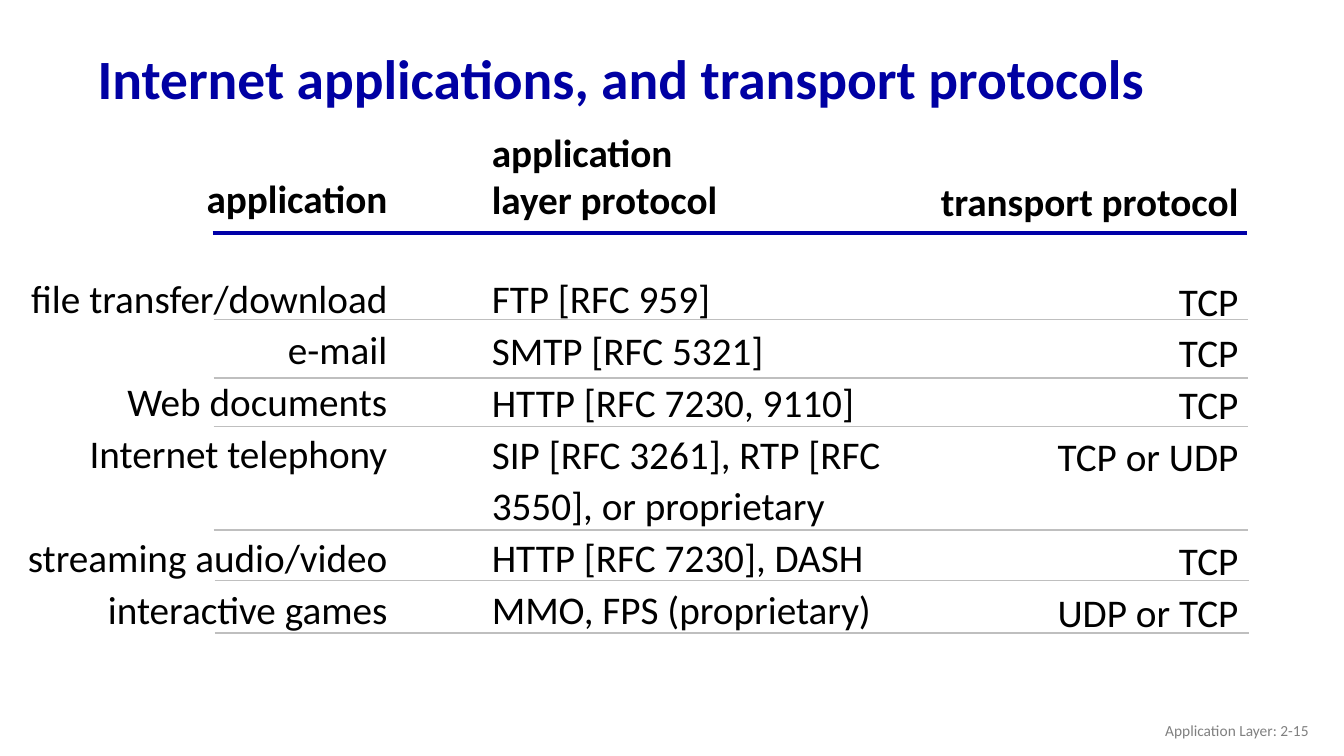
from dataclasses import dataclass

from lxml.etree import SubElement
from pptx import Presentation
from pptx.dml.color import RGBColor
from pptx.enum.shapes import MSO_CONNECTOR as Connector
from pptx.enum.text import MSO_ANCHOR as Anchor, PP_ALIGN as Align
from pptx.oxml.ns import qn
from pptx.slide import Slide
from pptx.util import Emu, Pt

PX = 9144
FONT = "Calibri"
BODY_SIZE = 28
HEADER_GAP = 34.2
ROW_GAP = 37.6


@dataclass(frozen=True)
class Line:
    text: str
    before: float = 0
    spacing: float = 1.1
    bold: bool = False


@dataclass(frozen=True)
class Column:
    left: int
    top: int
    width: int
    height: int
    align: Align
    headers: tuple[str, ...]
    entries: tuple[str, ...]
    gap_at: int = -1

    def lines(self) -> list[Line]:
        """Return the bold headers followed by the spaced entries."""
        gaps = {0: HEADER_GAP, self.gap_at: ROW_GAP}
        return [Line(text, spacing=1, bold=True) for text in self.headers] + [
            Line(text, gaps.get(index, 0)) for index, text in enumerate(self.entries)
        ]


@dataclass(frozen=True)
class Rule:
    left: int
    right: int
    y: int
    color: str = "BFBFBF"
    weight: float = 1.25


COLUMNS = (
    Column(13, 168, 381, 465, Align.RIGHT, ("application",),
           ("file transfer/download", "e-mail", "Web documents",
            "Internet telephony", "streaming audio/video", "interactive games"), 4),
    Column(478, 122, 440, 564, Align.LEFT, ("application", "layer protocol"),
           ("FTP [RFC 959]", "SMTP [RFC 5321]", "HTTP [RFC 7230, 9110]",
            "SIP [RFC 3261], RTP [RFC 3550], or proprietary",
            "HTTP [RFC 7230], DASH", "MMO, FPS (proprietary)")),
    Column(919, 171, 319, 465, Align.RIGHT, ("transport protocol",),
           ("TCP", "TCP", "TCP", "TCP or UDP", "TCP", "UDP or TCP"), 4),
)

RULES = (
    Rule(211, 1237, 231, "0000A8", 2.5),
    *(Rule(212, 1238, y) for y in (317, 375, 423, 526)),
    *(Rule(213, 1239, y) for y in (576, 628)),
)


def px(length: int) -> Emu:
    """Turn a length in px into EMU."""
    return Emu(length * PX)


def rgb(color: str) -> RGBColor:
    """Turn a hex string into a colour."""
    return RGBColor.from_string(color)


def add_text(page: Slide, lines: list[Line], *, left: int, top: int, width: int,
             height: int, size: float = BODY_SIZE, color: str = "000000",
             align: Align = Align.LEFT, anchor: Anchor = Anchor.TOP) -> None:
    """Add a text box with one paragraph for each line."""
    box = page.shapes.add_textbox(px(left), px(top), px(width), px(height))
    frame = box.text_frame
    frame.word_wrap = True
    frame.vertical_anchor = anchor
    for index, line in enumerate(lines):
        para = frame.add_paragraph() if index else frame.paragraphs[0]
        para.alignment = align
        para.line_spacing = line.spacing
        para.space_before = Pt(line.before)
        span = para.add_run()
        span.text = line.text
        span.font.name = FONT
        span.font.size = Pt(size)
        span.font.bold = line.bold
        span.font.color.rgb = rgb(color)


def add_rule(page: Slide, rule: Rule) -> None:
    """Add a horizontal rule without a shadow."""
    connector = page.shapes.add_connector(
        Connector.STRAIGHT, px(rule.left), px(rule.y), px(rule.right), px(rule.y))
    connector.line.color.rgb = rgb(rule.color)
    connector.line.width = Pt(rule.weight)
    SubElement(connector.element.spPr, qn("a:effectLst"))


def main() -> None:
    """Build the protocol overview and save it."""
    deck = Presentation()
    deck.slide_width, deck.slide_height = px(1333), px(750)
    page = deck.slides.add_slide(deck.slide_layouts[6])
    add_text(page, [Line("Internet applications, and transport protocols",
                         spacing=0.9, bold=True)],
             left=87, top=32, width=1150, height=98, size=39.6,
             color="0000A3", anchor=Anchor.MIDDLE)
    for rule in RULES:
        add_rule(page, rule)
    for column in COLUMNS:
        add_text(page, column.lines(), left=column.left, top=column.top,
                 width=column.width, height=column.height, align=column.align)
    add_text(page, [Line("Application Layer: 2-15", spacing=1)],
             left=1008, top=705, width=300, height=40, size=11,
             color="808080", align=Align.RIGHT, anchor=Anchor.MIDDLE)
    deck.save("out.pptx")


if __name__ == "__main__":
    main()
